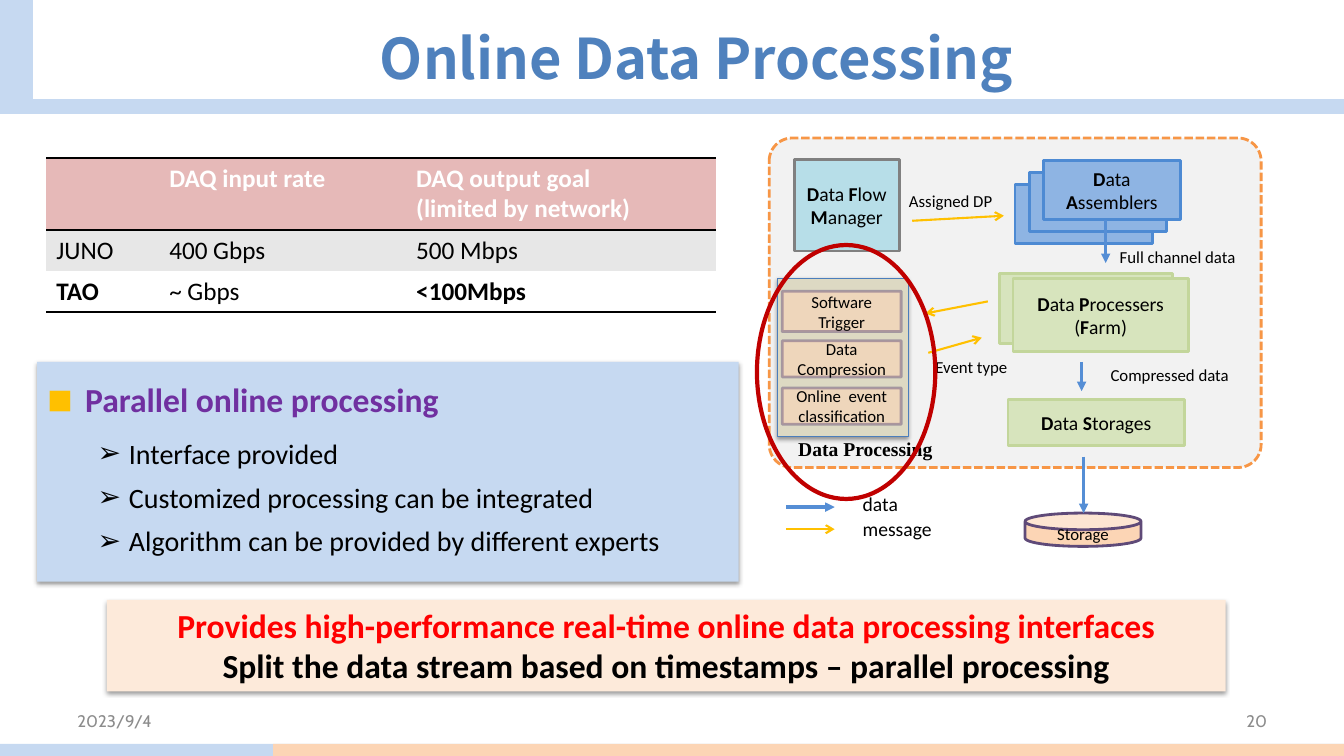
import lxml.etree
import pptx
import pptx.dml.color
import pptx.enum.dml
import pptx.enum.shapes
import pptx.enum.text
import pptx.oxml.ns
import pptx.util

Pt = pptx.util.Pt
RGBColor = pptx.dml.color.RGBColor
Kind = pptx.enum.shapes.MSO_SHAPE
Align = pptx.enum.text.PP_ALIGN
Anchor = pptx.enum.text.MSO_ANCHOR
Fit = pptx.enum.text.MSO_AUTO_SIZE
qn = pptx.oxml.ns.qn

BLACK = RGBColor(0x00, 0x00, 0x00)
WHITE = RGBColor(0xFF, 0xFF, 0xFF)
GRAY = RGBColor(0x8C, 0x8C, 0x8C)
RED = RGBColor(0xFF, 0x00, 0x00)
CRIMSON = RGBColor(0xC0, 0x00, 0x00)
PURPLE = RGBColor(0x70, 0x30, 0xA0)
PLUM = RGBColor(0x5F, 0x4A, 0x78)
GOLD = RGBColor(0xFF, 0xC0, 0x00)
ORANGE = RGBColor(0xF7, 0x96, 0x46)
PEACH = RGBColor(0xFC, 0xD5, 0xB5)
CREAM = RGBColor(0xFD, 0xEA, 0xDA)
TAN = RGBColor(0xDD, 0xD9, 0xC3)
ROSE = RGBColor(0xE6, 0xB9, 0xB8)
PALE = RGBColor(0xF2, 0xF2, 0xF2)
BAND = RGBColor(0xE7, 0xE7, 0xE7)
SLATE = RGBColor(0x80, 0x80, 0x80)
SKY = RGBColor(0xC6, 0xD9, 0xF1)
AQUA = RGBColor(0xB7, 0xDE, 0xE8)
BLUE = RGBColor(0x8E, 0xB4, 0xE3)
EDGE = RGBColor(0x4D, 0x8A, 0xD3)
FLOW = RGBColor(0x55, 0x8E, 0xD5)
STEEL = RGBColor(0x4B, 0x7E, 0xBC)
TITLE = RGBColor(0x4F, 0x81, 0xBD)
GREEN = RGBColor(0xD7, 0xE4, 0xBD)
MOSS = RGBColor(0xC3, 0xD6, 0x9B)

PLAIN_GRID = "{2D5ABB26-0587-4C30-8999-92F81FD0307C}"


def set_all(item, **form):
    for name, value in form.items():
        setattr(item, name, value)


def add_tag(parent, tag, **form):
    return lxml.etree.SubElement(parent, qn(tag), form)


def write(frame, text, size, color=BLACK, face="Calibri", align=Align.LEFT, bold=False):
    for num, line in enumerate(text.split("\n")):
        para = frame.add_paragraph() if num else frame.paragraphs[0]
        para.alignment = align
        for spot, part in enumerate(line.split("*")):
            if part:
                run = para.add_run()
                run.text = part
                set_all(run.font, name=face, size=Pt(size), bold=bold or spot % 2 == 1)
                run.font.color.rgb = color


def add_shade(shape):
    glow = add_tag(add_tag(shape._element.spPr, "a:effectLst"), "a:outerShdw", blurRad="39400",
                   dist="20300", dir="5400000", rotWithShape="0")
    add_tag(add_tag(glow, "a:srgbClr", val="000000"), "a:alpha", val="38000")


def add_box(place, at, fill=None, edge=None, width=2, kind=Kind.RECTANGLE, text="", size=14,
            shade=False):
    box = place.add_shape(kind, *map(Pt, at))
    if shade:
        add_shade(box)
    else:
        box.shadow.inherit = False
    if fill is None:
        box.fill.background()
    else:
        box.fill.solid()
        box.fill.fore_color.rgb = fill
    if edge is None:
        box.line.fill.background()
    else:
        box.line.color.rgb = edge
        box.line.width = Pt(width)
    if text:
        set_all(box.text_frame, word_wrap=True, vertical_anchor=Anchor.MIDDLE)
        write(box.text_frame, text, size, align=Align.CENTER)
    return box


def add_label(place, at, text, size=12, anchor=Anchor.TOP, **form):
    frame = place.add_textbox(*map(Pt, at)).text_frame
    set_all(frame, word_wrap=True, vertical_anchor=anchor)
    write(frame, text, size, **form)


def add_arrow(place, ends, color, width, head):
    line = place.add_connector(pptx.enum.shapes.MSO_CONNECTOR.STRAIGHT, *map(Pt, ends))
    line.line.color.rgb = color
    line.line.width = Pt(width)
    add_tag(line.line._get_or_add_ln(), "a:tailEnd", type=head)
    add_tag(line._element.spPr, "a:effectLst")


def add_bars(place):
    for at, color in (((0, 531.4, 960, 8.6), SKY), ((195.1, 531.4, 764.9, 8.6), PEACH)):
        add_box(place, at, color)
    for at in ((0, 72, 960, 8.6), (0, 0, 22.3, 72)):
        add_box(place, at, SKY, SKY)


def set_title(title):
    set_all(title, left=Pt(192.2), top=Pt(12.2), width=Pt(847.4), height=Pt(56.9))
    set_all(title.text_frame, margin_left=Pt(79.2), vertical_anchor=Anchor.MIDDLE,
            auto_size=Fit.NONE)
    write(title.text_frame, "Online Data Processing", 40, TITLE, "Noto Sans CJK SC", bold=True)


def set_list(body):
    set_all(body, left=Pt(26.6), top=Pt(258.5), width=Pt(501.1), height=Pt(157))
    body.fill.solid()
    body.fill.fore_color.rgb = SKY
    add_shade(body)
    frame = body.text_frame
    frame.auto_size = Fit.NONE
    write(frame, "Parallel online processing", 24, PURPLE, bold=True)
    for text in ("Interface provided", "Customized processing can be integrated",
                 "Algorithm can be provided by different experts"):
        write_item = frame.add_paragraph()
        write_item.level = 1
        run = write_item.add_run()
        run.text = text
        set_all(run.font, name="Calibri", size=Pt(20), bold=False)
        run.font.color.rgb = BLACK
    for para in frame.paragraphs:
        top = para.level == 0
        set_all(para, line_spacing=1.3, space_before=Pt(0), space_after=Pt(5 if top else 0))
        props = para._p.get_or_add_pPr()
        left, hang = (27, 27) if top else (58.3, 22.3)
        props.set("marL", str(Pt(left)))
        props.set("indent", str(-Pt(hang)))
        if top:
            add_tag(add_tag(props, "a:buClr"), "a:srgbClr", val=str(GOLD))
            add_tag(props, "a:buSzPct", val="80000")
        add_tag(props, "a:buFont", typeface="Calibri")
        add_tag(props, "a:buChar", char="■" if top else "➢")


def add_rule(cell, tag):
    rule = lxml.etree.Element(qn(tag), w=str(Pt(2)))
    add_tag(add_tag(rule, "a:solidFill"), "a:srgbClr", val=str(BLACK))
    cell._tc.get_or_add_tcPr().insert(0, rule)


def add_rates(place):
    rows = (("", "DAQ input rate", "DAQ output goal\n(limited by network)"),
            ("JUNO", "400 Gbps", "500 Mbps"),
            ("*TAO*", "~ Gbps", "*<100Mbps*"))
    table = place.add_table(3, 3, Pt(33.1), Pt(113), Pt(478.1), Pt(110)).table
    table._tbl.tblPr.find(qn("a:tableStyleId")).text = PLAIN_GRID
    for col, width in zip(table.columns, (80.6, 176.4, 221)):
        col.width = Pt(width)
    for row, height in zip(table.rows, (51.4, 29.3, 29.3)):
        row.height = Pt(height)
    for num, (row, fill) in enumerate(zip(rows, (ROSE, BAND, WHITE))):
        head = num == 0
        for spot, text in enumerate(row):
            cell = table.cell(num, spot)
            cell.fill.solid()
            cell.fill.fore_color.rgb = fill
            write(cell.text_frame, text, 18, WHITE if head else BLACK, bold=head)
            if num != 1:
                add_rule(cell, "a:lnB")
            if head:
                add_rule(cell, "a:lnT")


def add_chain(place):
    frame = add_box(place, (549.4, 98.6, 351.4, 235.4), PALE, ORANGE, kind=Kind.ROUNDED_RECTANGLE)
    frame.adjustments[0] = 0.07
    frame.line.dash_style = pptx.enum.dml.MSO_LINE.SQUARE_DOT
    for num, text in enumerate(("", "", "*D*ata *A*ssemblers")):
        add_box(place, (725 + 10.1 * num, 131.7 - 8.6 * num, 98, 42.5), BLUE, EDGE, text=text)
    for at, text in (((714.2, 195.1, 123.1, 50.4), ""),
                     ((723.6, 198.7, 125.3, 52.6), "*D*ata* P*rocessers (*F*arm)"),
                     ((720, 285.1, 126, 33.1), "*D*ata *S*torages")):
        add_box(place, at, GREEN, MOSS, text=text)
    add_box(place, (567.4, 113.8, 74.9, 65.5), AQUA, SLATE, text="*D*ata *F*low\n*M*anager")
    store = add_box(place, (732.2, 366.5, 82.8, 23.8), PEACH, PLUM, kind=Kind.CAN,
                    text="Storage", size=12)
    store.adjustments[0] = 0.5

    for ends in ((774, 326.2, 774, 366.5), (561.6, 362.2, 596.2, 362.2),
                 (789.8, 157, 789.8, 187.9), (772.6, 258.5, 772.6, 279.4)):
        add_arrow(place, ends, FLOW, 2.25, "triangle")
    for ends in ((663.1, 252, 701.3, 241.2), (561.6, 378, 596.2, 378),
                 (651.6, 157.7, 717.1, 154.1), (705.6, 215.3, 661, 223.9)):
        add_arrow(place, ends, GOLD, 1.5, "arrow")

    for at, text in (((642.2, 132.5, 87.8, 21.6), "Assigned DP"),
                     ((792.7, 172.8, 110.9, 21.6), "Full channel data"),
                     ((661, 251.3, 85, 21.6), "Event type"),
                     ((786.2, 257, 117.4, 21.6), "Compressed data")):
        add_label(place, at, text)
    add_label(place, (609.1, 347.8, 56.9, 24.5), "data", 14)
    add_label(place, (609.1, 365.8, 75, 24.5), "message", 14)
    add_label(place, (563, 308.2, 136.1, 24.5), "Data Processing", 14,
              face="Times New Roman", bold=True)

    add_box(place, (555.1, 198.7, 93.6, 113), TAN, STEEL, 0.75, shade=True)
    for top, height, text in ((208.1, 28.8, "Software Trigger"), (243.4, 25.9, "Data Compression"),
                              (277.2, 25.9, "Online  event classification")):
        step = add_box(place, (558.7, top, 85, height), PEACH, PLUM, text=text, size=12)
        for color, alpha in zip(step._element.spPr.iter(qn("a:srgbClr")), ("57000", "46000")):
            add_tag(color, "a:alpha", val=alpha)


def main():
    deck = pptx.Presentation()
    set_all(deck, slide_width=Pt(960), slide_height=Pt(540))
    slide = deck.slides.add_slide(deck.slide_layouts[1])
    place = slide.shapes
    set_title(place.title)
    set_list(slide.placeholders[1])
    add_bars(place)
    add_chain(place.add_group_shape().shapes)
    note = add_box(place, (76.3, 428.4, 799.2, 65.5), CREAM, shade=True)
    set_all(note.text_frame, word_wrap=True, vertical_anchor=Anchor.TOP)
    write(note.text_frame, "Provides high-performance real-time online data processing interfaces\n"
          "Split the data stream based on timestamps – parallel processing",
          24, align=Align.CENTER, bold=True)
    note.text_frame.paragraphs[0].runs[0].font.color.rgb = RED
    add_rates(place)
    add_box(place, (540.7, 175, 127.4, 181.4), edge=CRIMSON, width=3, kind=Kind.OVAL)
    for left, text, align in ((688.3, "20", Align.RIGHT), (48.2, "2023/9/4", Align.LEFT)):
        add_label(place, (left, 500.4, 223.9, 28.8), text, anchor=Anchor.MIDDLE,
                  color=GRAY, face="Cabin", align=align)
    deck.save("out.pptx")


if __name__ == "__main__":
    main()
